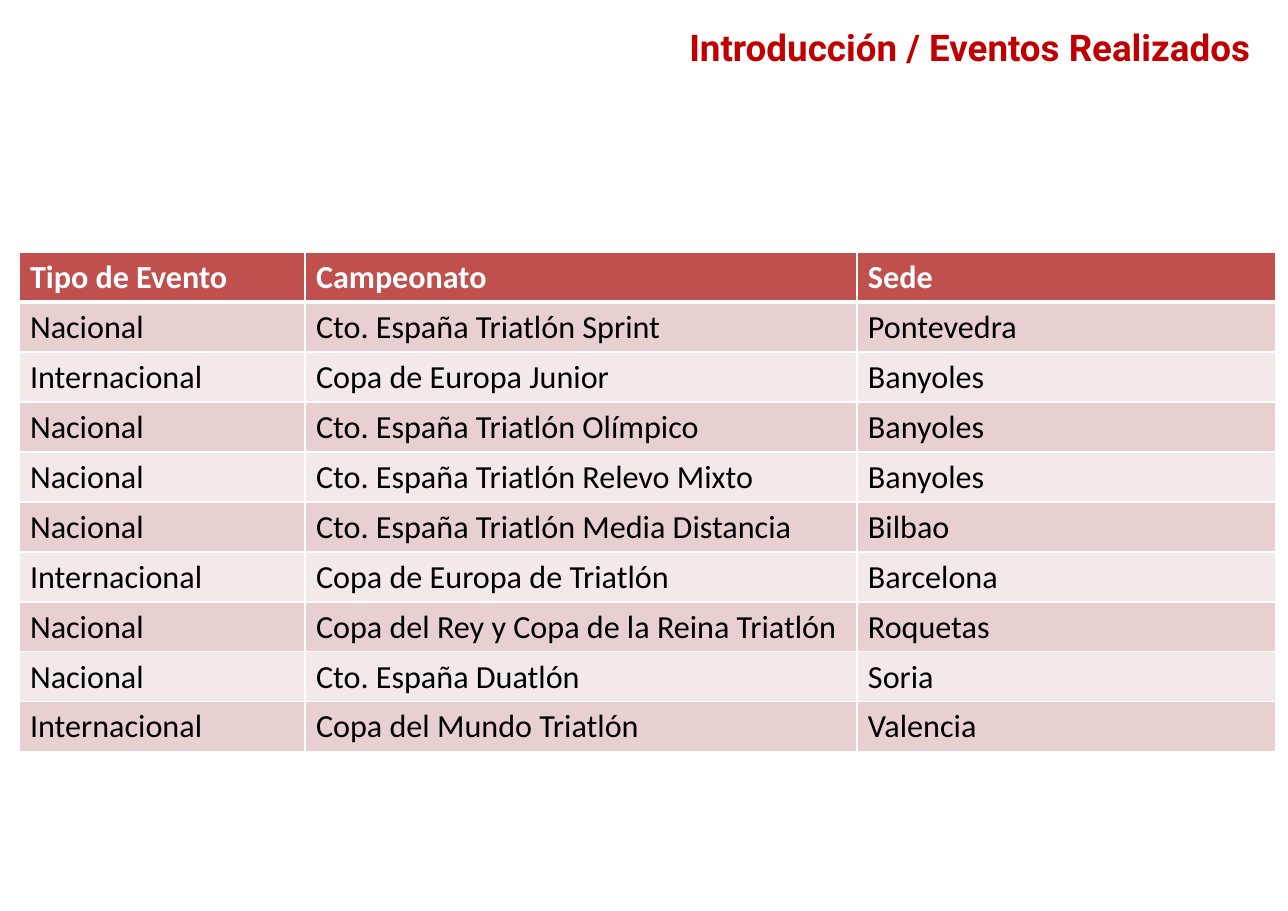
import pptx
import pptx.dml.color
import pptx.enum.text
import pptx.oxml
import pptx.oxml.ns
import pptx.util

PX = 8298
COLORS = {
    "title": "C00000",
    "header": "C0504D",
    "odd": "E8D0D0",
    "even": "F4E9E9",
    "white": "FFFFFF",
    "black": "000000",
}
COLUMNS = [286, 552, 419]
EVENTS = [
    ("Tipo de Evento", "Campeonato", "Sede"),
    ("Nacional", "Cto. España Triatlón Sprint", "Pontevedra"),
    ("Internacional", "Copa de Europa Junior", "Banyoles"),
    ("Nacional", "Cto. España Triatlón Olímpico", "Banyoles"),
    ("Nacional", "Cto. España Triatlón Relevo Mixto", "Banyoles"),
    ("Nacional", "Cto. España Triatlón Media Distancia", "Bilbao"),
    ("Internacional", "Copa de Europa de Triatlón", "Barcelona"),
    ("Nacional", "Copa del Rey y Copa de la Reina Triatlón", "Roquetas"),
    ("Nacional", "Cto. España Duatlón", "Soria"),
    ("Internacional", "Copa del Mundo Triatlón", "Valencia"),
]


def px(*lengths):
    return [pptx.util.Emu(n * PX) for n in lengths]


def rgb(name):
    return pptx.dml.color.RGBColor.from_string(COLORS[name])


def write(tf, text, color, **font):
    p = tf.paragraphs[0]
    r = p.add_run()
    r.text = text
    for key, value in font.items():
        setattr(r.font, key, value)
    r.font.color.rgb = rgb(color)
    return p


def add_title(s, text, box):
    tf = s.shapes.add_textbox(*px(*box)).text_frame
    tf.word_wrap = True
    p = write(tf, text, "title", name="Roboto", size=pptx.util.Pt(24), bold=True)
    p.alignment = pptx.enum.text.PP_ALIGN.RIGHT


def set_borders(cell, widths):
    tcPr = cell._tc.get_or_add_tcPr()
    for i, (side, width) in enumerate(widths.items()):
        ln = pptx.oxml.parse_xml(
            f'<a:ln{side} {pptx.oxml.ns.nsdecls("a")} w="{pptx.util.Pt(width)}">'
            f'<a:solidFill><a:srgbClr val="{COLORS["white"]}"/></a:solidFill>'
            f'</a:ln{side}>'
        )
        tcPr.insert(i, ln)


def add_table(s, rows, columns, left, top, row_height):
    box = px(left, top, sum(columns), row_height * len(rows))
    table = s.shapes.add_table(len(rows), len(columns), *box).table
    for column, width in zip(table.columns, px(*columns)):
        column.width = width
    for i, row in enumerate(rows):
        header = i == 0
        fill = "header" if header else ("even", "odd")[i % 2]
        borders = {"L": 1, "R": 1, "T": 3 if i == 1 else 1, "B": 3 if header else 1}
        for j, text in enumerate(row):
            cell = table.cell(i, j)
            cell.fill.solid()
            cell.fill.fore_color.rgb = rgb(fill)
            set_borders(cell, borders)
            write(cell.text_frame, text, "white" if header else "black",
                  name="Calibri", size=pptx.util.Pt(21), bold=header)


def main():
    prs = pptx.Presentation()
    prs.slide_width, prs.slide_height = px(1288, 911)
    s = prs.slides.add_slide(prs.slide_layouts[6])
    add_title(s, "Introducción / Eventos Realizados", (555, 19, 706, 65))
    add_table(s, EVENTS, COLUMNS, 19, 252, 50)
    prs.save("out.pptx")


if __name__ == "__main__":
    main()
